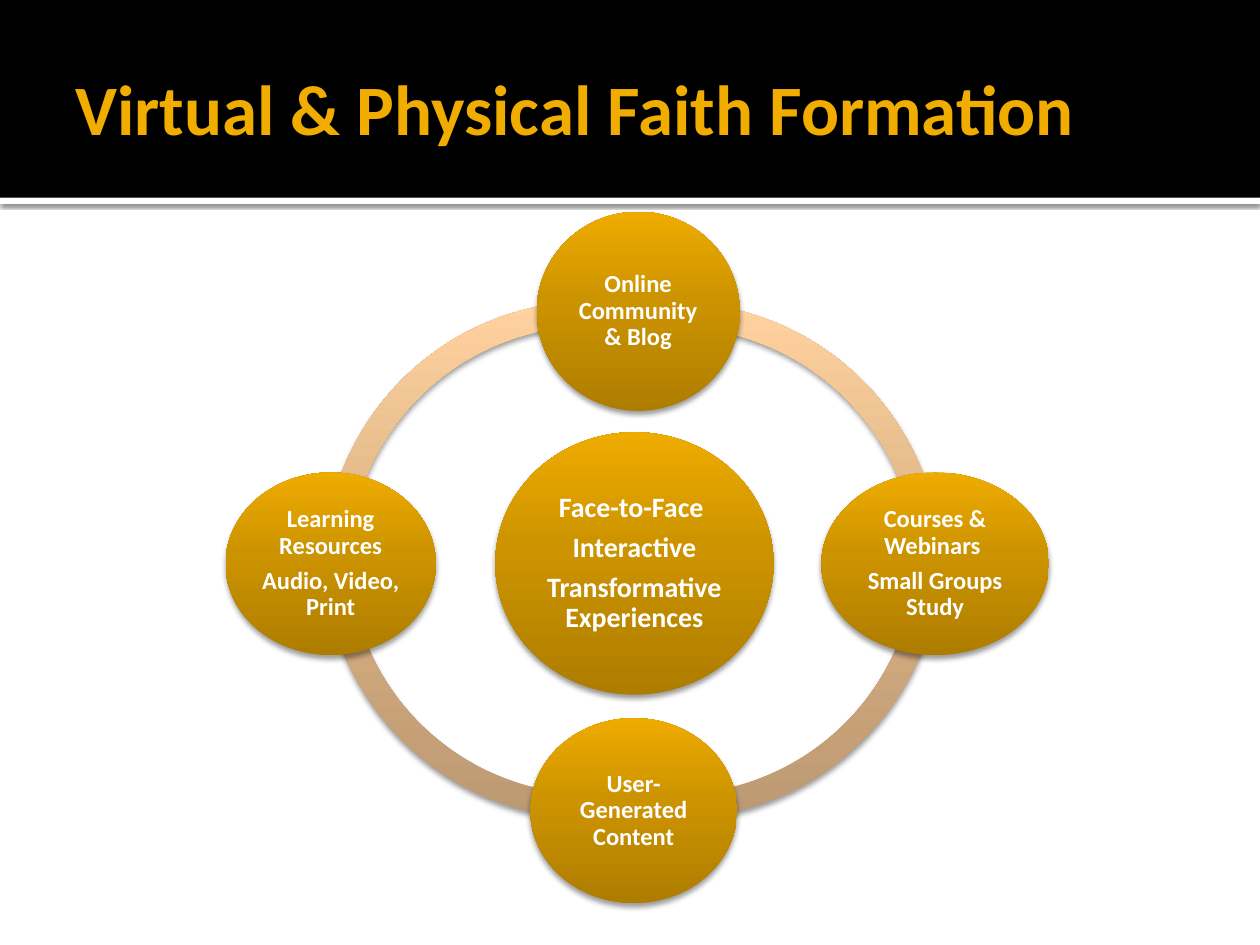
from copy import deepcopy
from dataclasses import dataclass

from lxml import etree
from pptx import Presentation
from pptx.dml.color import RGBColor
from pptx.enum.shapes import MSO_SHAPE
from pptx.enum.text import MSO_ANCHOR, PP_ALIGN
from pptx.oxml.ns import qn
from pptx.util import Pt

RECTANGLE = MSO_SHAPE.RECTANGLE
ELLIPSE = MSO_SHAPE.OVAL
ARC = MSO_SHAPE.BLOCK_ARC
MIDDLE = MSO_ANCHOR.MIDDLE
CENTER = PP_ALIGN.CENTER

BLACK = RGBColor(0x00, 0x00, 0x00)
WHITE = RGBColor(0xFF, 0xFF, 0xFF)
GOLD = RGBColor(0xF0, 0xAD, 0x00)
GOLD_STOPS = (RGBColor(0xAE, 0x7D, 0x00), RGBColor(0xCC, 0x93, 0x00), RGBColor(0xEE, 0xAB, 0x00))
PEACH_STOPS = (RGBColor(0xBC, 0x99, 0x72), RGBColor(0xDD, 0xB4, 0x86), RGBColor(0xFF, 0xD2, 0x9F))
STOP_POSITIONS = (0, 0.55, 1)

FONT = "Calibri"
PAGE_WIDTH, PAGE_HEIGHT = 720, 540
BANNER_HEIGHT = 113
RING_SIZE = 306
RING_THICKNESS = 0.046


@dataclass(frozen=True)
class RingArc:
    left: float
    top: float
    start: float
    end: float


@dataclass(frozen=True)
class Bubble:
    left: float
    top: float
    width: float
    height: float
    lines: tuple[str, ...]
    size: float = 14


RING_ARCS = (
    RingArc(185, 172.1, 181.2, 280.22),
    RingArc(185, 162, 80.69, 177.44),
    RingArc(231.8, 162, 2.67, 98.64),
    RingArc(231.8, 172.8, 262.36, 358.41),
)
BUBBLES = (
    Bubble(283, 247, 159, 150, ("Face-to-Face ", "Interactive", "Transformative Experiences"), 16),
    Bubble(306.7, 121, 116, 113.8, ("Online Community & Blog",)),
    Bubble(469.4, 270, 130, 104.4, ("Courses & Webinars ", "Small Groups Study")),
    Bubble(303.1, 410.4, 118.1, 105.8, ("User-Generated Content",)),
    Bubble(128.9, 270, 120.2, 104.4, ("Learning Resources", "Audio, Video, Print")),
)


def add_plain_shape(page, kind, left: float, top: float, width: float, height: float):
    """Add a shape without outline or shadow."""
    shape = page.shapes.add_shape(kind, Pt(left), Pt(top), Pt(width), Pt(height))
    shape.line.fill.background()
    shape.shadow.inherit = False
    return shape


def add_shadow(shape, blur: float, distance: float, opacity: int) -> None:
    """Cast a black shadow straight down."""
    effects = shape._element.spPr.find(qn("a:effectLst"))
    shadow = etree.SubElement(
        effects, qn("a:outerShdw"), blurRad=str(Pt(blur)), dist=str(Pt(distance)),
        dir="5400000", algn="ctr", rotWithShape="0",
    )
    color = etree.SubElement(shadow, qn("a:srgbClr"), val=str(BLACK))
    etree.SubElement(color, qn("a:alpha"), val=str(opacity * 1000))


def fill_gradient(shape, colors: tuple[RGBColor, ...]) -> None:
    """Blend the three colours from bottom to top."""
    shape.fill.gradient()
    shape.fill.gradient_angle = 90
    stop_list = shape._element.spPr.find(".//" + qn("a:gsLst"))
    stop_list.append(deepcopy(stop_list[0]))
    for stop, color, position in zip(shape.fill.gradient_stops, colors, STOP_POSITIONS):
        stop.color.rgb = color
        stop.position = position


def format_span(span, size: float, color: RGBColor) -> None:
    span.font.name = FONT
    span.font.size = Pt(size)
    span.font.bold = True
    span.font.color.rgb = color


def set_margins(frame, left: float, top: float, right: float, bottom: float) -> None:
    frame.margin_left, frame.margin_top = Pt(left), Pt(top)
    frame.margin_right, frame.margin_bottom = Pt(right), Pt(bottom)


def draw_banner(page) -> None:
    strip = add_plain_shape(page, RECTANGLE, 0, BANNER_HEIGHT, PAGE_WIDTH, 3.6)
    strip.fill.solid()
    strip.fill.fore_color.rgb = WHITE
    add_shadow(strip, 2.5, 0.8, 60)
    banner = add_plain_shape(page, RECTANGLE, 0, 0, PAGE_WIDTH, BANNER_HEIGHT)
    banner.fill.solid()
    banner.fill.fore_color.rgb = BLACK


def draw_title(page) -> None:
    box = page.shapes.add_textbox(Pt(36), Pt(12.2), Pt(648), Pt(98.6))
    frame = box.text_frame
    frame.word_wrap = True
    frame.vertical_anchor = MIDDLE
    set_margins(frame, 7.2, 3.6, 3.6, 3.6)
    frame.text = "Virtual & Physical Faith Formation"
    format_span(frame.paragraphs[0].runs[0], 40.5, GOLD)


def draw_arc(page, arc: RingArc) -> None:
    shape = add_plain_shape(page, ARC, arc.left, arc.top, RING_SIZE, RING_SIZE)
    # Angles are stored in 60000ths of a degree, adjustments in 100000ths.
    shape.adjustments[0] = arc.start * 0.6
    shape.adjustments[1] = arc.end * 0.6
    shape.adjustments[2] = RING_THICKNESS
    fill_gradient(shape, PEACH_STOPS)
    add_shadow(shape, 3.1, 2, 38)


def draw_bubble(page, bubble: Bubble) -> None:
    shape = add_plain_shape(page, ELLIPSE, bubble.left, bubble.top, bubble.width, bubble.height)
    fill_gradient(shape, GOLD_STOPS)
    add_shadow(shape, 3.1, 2, 38)
    frame = shape.text_frame
    frame.word_wrap = True
    frame.vertical_anchor = MIDDLE
    set_margins(frame, 1.4, 1.4, 1.4, 1.4)
    frame.text = "\n".join(bubble.lines)
    for para in frame.paragraphs:
        para.alignment = CENTER
        para.line_spacing = 0.9
        para.space_after = Pt(bubble.size * 0.35)
        format_span(para.runs[0], bubble.size, WHITE)


def main() -> None:
    deck = Presentation()
    deck.slide_width, deck.slide_height = Pt(PAGE_WIDTH), Pt(PAGE_HEIGHT)
    page = deck.slides.add_slide(deck.slide_layouts[6])
    draw_banner(page)
    draw_title(page)
    for arc in RING_ARCS:
        draw_arc(page, arc)
    for bubble in BUBBLES:
        draw_bubble(page, bubble)
    deck.save("out.pptx")


if __name__ == "__main__":
    main()
